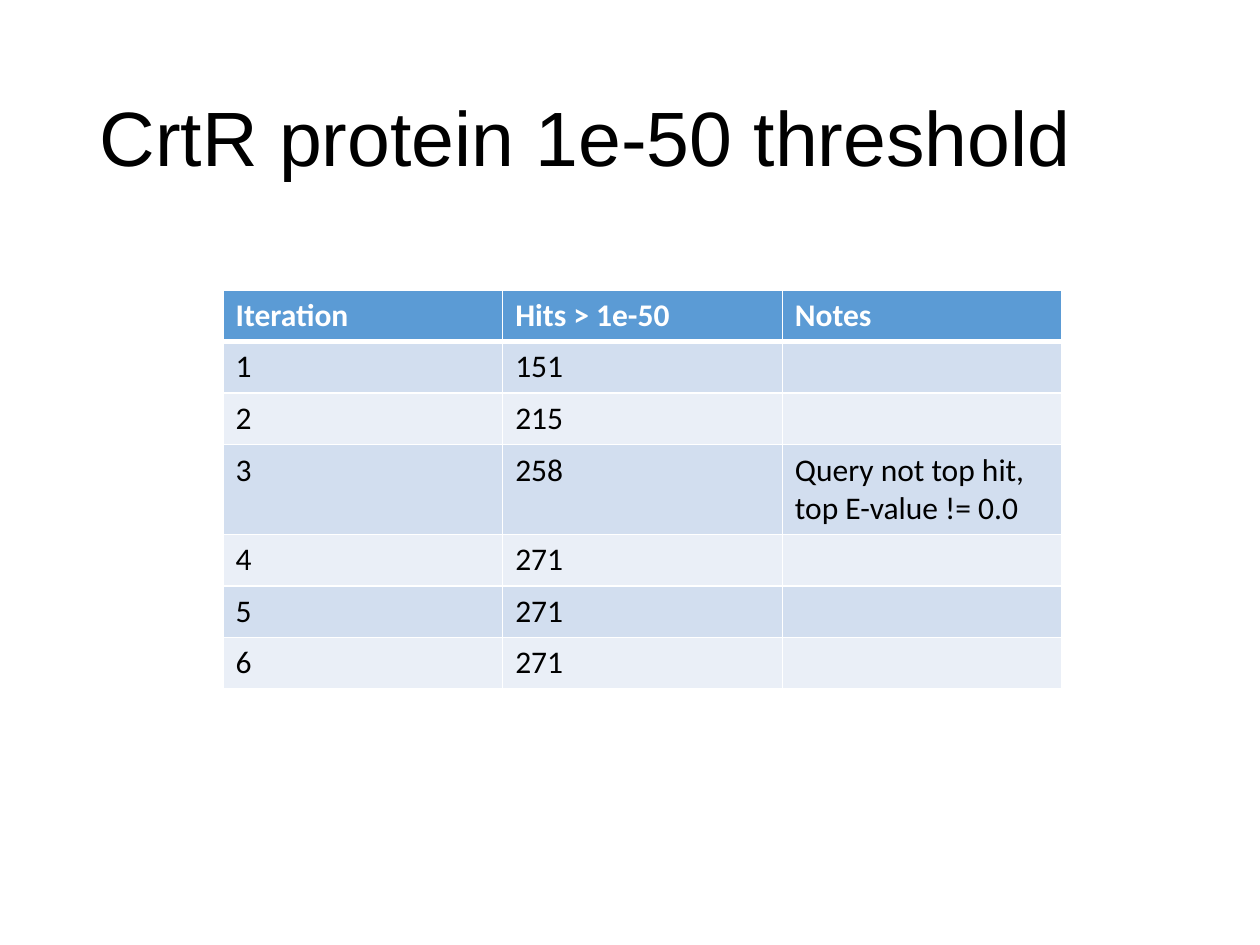
from pptx import Presentation
from pptx.dml.color import RGBColor
from pptx.enum.text import MSO_ANCHOR, PP_ALIGN
from pptx.oxml import parse_xml
from pptx.oxml.ns import nsdecls
from pptx.util import Inches, Pt

# Content
TITLE = "CrtR protein 1e-50 threshold"
HEADER = ("Iteration", "Hits > 1e-50", "Notes")
HITS = (151, 215, 258, 271, 271, 271)
NOTES = {3: "Query not top hit, top E-value != 0.0"}
ROWS = [HEADER] + [
    (str(number), str(hits), NOTES.get(number, ""))
    for number, hits in enumerate(HITS, start=1)
]

COLORS = {
    "text": "000000",
    "white": "FFFFFF",
    "header": "5B9BD5",
    "odd": "D2DEEF",
    "even": "EAEFF7",
}
COLUMN_WIDTH, ROW_HEIGHT = 2.22, 0.41


def color(name):
    return RGBColor.from_string(COLORS[name])


def style_run(run, font, size, color_name, bold=False):
    run.font.name = font
    run.font.size = Pt(size)
    run.font.bold = bold
    run.font.color.rgb = color(color_name)


def add_borders(cell, widths):
    properties = cell._tc.get_or_add_tcPr()
    for side, width in zip("LRTB", widths):
        properties.append(parse_xml(
            f'<a:ln{side} {nsdecls("a")} w="{Pt(width)}"><a:solidFill>'
            f'<a:srgbClr val="{COLORS["white"]}"/></a:solidFill></a:ln{side}>'
        ))


deck = Presentation()
deck.slide_width, deck.slide_height = Inches(10), Inches(7.5)
page = deck.slides.add_slide(deck.slide_layouts[5])

# Title
title = page.shapes.title
title.left, title.top = Inches(0.69), Inches(0.4)
title.width, title.height = Inches(8.62), Inches(1.45)
title.text_frame.text = TITLE
title.text_frame.vertical_anchor = MSO_ANCHOR.MIDDLE
para = title.text_frame.paragraphs[0]
para.alignment = PP_ALIGN.LEFT
para.line_spacing = 0.9
style_run(para.runs[0], "Arial", 44, "text")

# Table of hits per iteration
table = page.shapes.add_table(
    len(ROWS), len(HEADER), Inches(1.77), Inches(2.3),
    Inches(COLUMN_WIDTH * len(HEADER)), Inches(ROW_HEIGHT * len(ROWS)),
).table
for column in table.columns:
    column.width = Inches(COLUMN_WIDTH)

for index, texts in enumerate(ROWS):
    table.rows[index].height = Inches(ROW_HEIGHT)
    is_header = index == 0
    fill = "header" if is_header else "odd" if index % 2 else "even"
    # The heavier rule is shared by the header and the first data row
    widths = (1, 1, 3 if index == 1 else 1, 3 if is_header else 1)
    for cell, text in zip(table.rows[index].cells, texts):
        add_borders(cell, widths)
        cell.fill.solid()
        cell.fill.fore_color.rgb = color(fill)
        cell.text_frame.text = text
        for run in cell.text_frame.paragraphs[0].runs:
            style_run(run, "Calibri", 18, "white" if is_header else "text", is_header)

deck.save("out.pptx")
